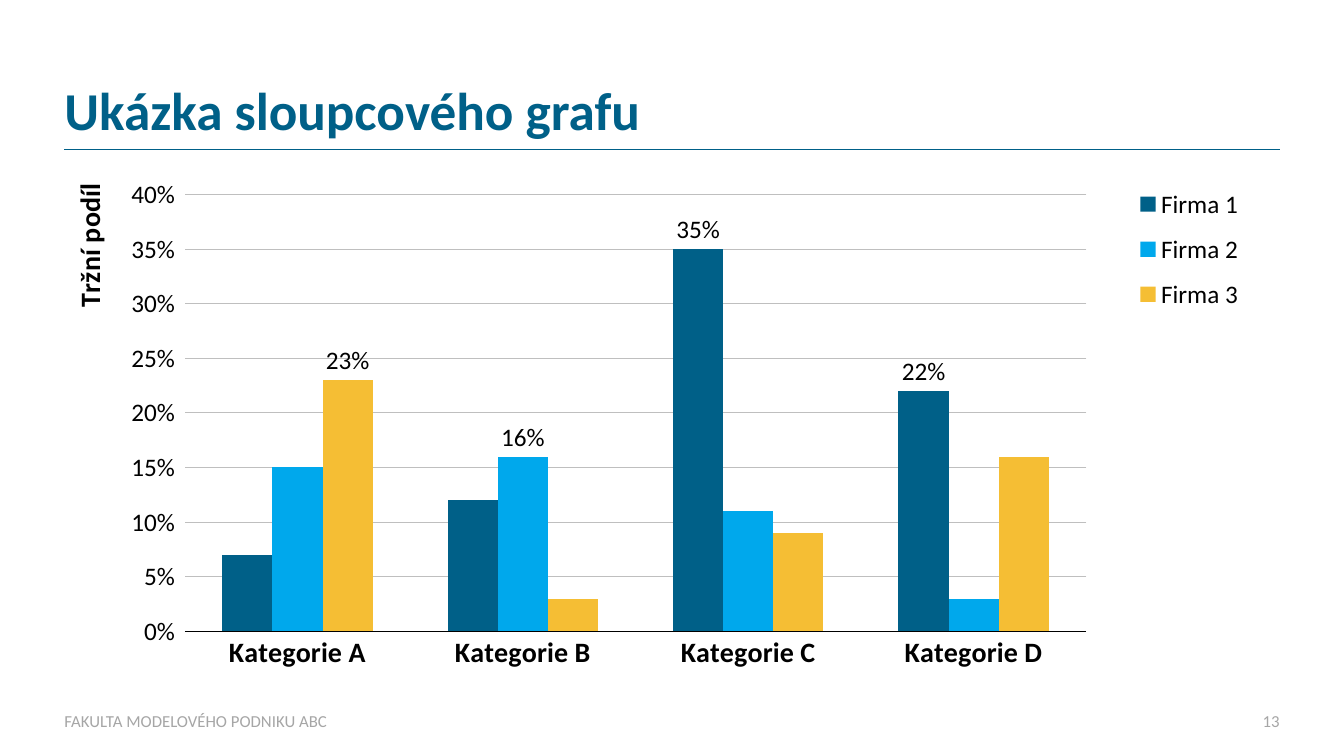
from lxml import etree
from pptx import Presentation
from pptx.chart.data import CategoryChartData
from pptx.dml.color import RGBColor
from pptx.enum.chart import XL_CHART_TYPE, XL_LABEL_POSITION, XL_LEGEND_POSITION, XL_TICK_MARK
from pptx.enum.shapes import MSO_CONNECTOR
from pptx.enum.text import MSO_ANCHOR, PP_ALIGN
from pptx.oxml.ns import qn
from pptx.util import Pt

COLUMNS = XL_CHART_TYPE.COLUMN_CLUSTERED
STRAIGHT = MSO_CONNECTOR.STRAIGHT
OUTSIDE_END = XL_LABEL_POSITION.OUTSIDE_END
LEGEND_RIGHT = XL_LEGEND_POSITION.RIGHT
TICK_NONE, TICK_OUT = XL_TICK_MARK.NONE, XL_TICK_MARK.OUTSIDE
BOTTOM, MIDDLE = MSO_ANCHOR.BOTTOM, MSO_ANCHOR.MIDDLE
LEFT, RIGHT = PP_ALIGN.LEFT, PP_ALIGN.RIGHT

FONT = "Calibri"
COLORS = {"petrol": "006088", "sky": "00A8EC", "amber": "F5BE34",
          "black": "000000", "grid": "BFBFBF", "footer": "A6A6A6"}
MARGIN, WIDTH, CHART_HEIGHT = 46, 868, 368.5

categories = ["Kategorie A", "Kategorie B", "Kategorie C", "Kategorie D"]
firms = [
    ("Firma 1", "petrol", [0.07, 0.12, 0.35, 0.22]),
    ("Firma 2", "sky", [0.15, 0.16, 0.11, 0.03]),
    ("Firma 3", "amber", [0.23, 0.03, 0.09, 0.16]),
]


def style(font, size, color="black", bold=False):
    font.name = FONT
    font.size = Pt(size)
    font.bold = bold
    font.color.rgb = RGBColor.from_string(COLORS[color])


def set_layout(parent, index, modes, **box):
    old = parent.find(qn("c:layout"))
    if old is not None:
        parent.remove(old)
    layout = etree.Element(qn("c:layout"))
    parent.insert(index, layout)
    manual = etree.SubElement(layout, qn("c:manualLayout"))
    for name, value in modes.items():
        etree.SubElement(manual, qn("c:" + name)).set("val", value)
    for name, length in box.items():
        share = length / (WIDTH if name in "xw" else CHART_HEIGHT)
        etree.SubElement(manual, qn("c:" + name)).set("val", str(share))


prs = Presentation()
prs.slide_width, prs.slide_height = Pt(960), Pt(540)
s = prs.slides.add_slide(prs.slide_layouts[5])

rule = s.shapes.add_connector(STRAIGHT, Pt(MARGIN), Pt(106.5), Pt(MARGIN + WIDTH), Pt(106.5))
rule.line.color.rgb = RGBColor.from_string(COLORS["petrol"])
rule.line.width = Pt(0.25)
etree.SubElement(rule._element.spPr, qn("a:effectLst"))

title = s.shapes.title
footer = s.shapes.add_textbox(0, 0, 0, 0)
number = s.shapes.add_textbox(0, 0, 0, 0)
texts = [
    (title, "Ukázka sloupcového grafu", MARGIN, 60, WIDTH, 41.5, BOTTOM, LEFT, 38, "petrol", True),
    (footer, "FAKULTA MODELOVÉHO PODNIKU ABC", MARGIN, 507.5, 732, 14.5, MIDDLE, LEFT, 12, "footer", False),
    (number, "13", 877, 507.5, 37, 14.5, MIDDLE, RIGHT, 12, "footer", False),
]
for sp, text, x, y, w, h, anchor, align, size, color, bold in texts:
    sp.left, sp.top, sp.width, sp.height = Pt(x), Pt(y), Pt(w), Pt(h)
    tf = sp.text_frame
    tf.text = text
    tf.word_wrap = True
    tf.vertical_anchor = anchor
    tf.margin_left = tf.margin_right = tf.margin_top = tf.margin_bottom = 0
    p = tf.paragraphs[0]
    p.alignment = align
    style(p.runs[0].font, size, color, bold)
title.text_frame.paragraphs[0].line_spacing = 0.9

data = CategoryChartData(number_format="0%")
data.categories = categories
for name, color, shares in firms:
    data.add_series(name, shares)
chart = s.shapes.add_chart(COLUMNS, Pt(MARGIN), Pt(122.5), Pt(WIDTH), Pt(CHART_HEIGHT), data).chart
chart.has_title = False
style(chart.font, 18)

plot = chart.plots[0]
plot.gap_width = 150
plot.overlap = 0
plot.vary_by_categories = False
leaders = [max(shares) for shares in zip(*(firm[2] for firm in firms))]
for series, (name, color, shares) in zip(plot.series, firms):
    series.format.fill.solid()
    series.format.fill.fore_color.rgb = RGBColor.from_string(COLORS[color])
    series.invert_if_negative = False
    labels = series.data_labels
    labels.show_value = False
    labels.number_format = "0%"
    labels.number_format_is_linked = False
    for i, share in enumerate(shares):
        if share == leaders[i]:
            label = series.points[i].data_label
            label.position = OUTSIDE_END
            style(label.font, 18)

cat_axis = chart.category_axis
cat_axis.major_tick_mark = TICK_NONE
cat_axis.format.line.color.rgb = RGBColor.from_string(COLORS["black"])
cat_axis.format.line.width = Pt(0.5)
style(cat_axis.tick_labels.font, 20, bold=True)

val_axis = chart.value_axis
val_axis.minimum_scale, val_axis.maximum_scale, val_axis.major_unit = 0, 0.4, 0.05
val_axis.major_tick_mark = TICK_OUT
val_axis.format.line.fill.background()
val_axis.major_gridlines.format.line.color.rgb = RGBColor.from_string(COLORS["grid"])
val_axis.major_gridlines.format.line.width = Pt(0.75)
val_axis.tick_labels.number_format = "0%"
val_axis.tick_labels.number_format_is_linked = False
style(val_axis.tick_labels.font, 18)

axis_title = val_axis.axis_title
tf = axis_title.text_frame
tf.text = "Tržní podíl"
style(tf.paragraphs[0].runs[0].font, 20, bold=True)
body = axis_title._element.find(".//" + qn("a:bodyPr"))
body.set("rot", "-5400000")
body.set("vert", "horz")

chart.has_legend = True
legend = chart.legend
legend.position = LEGEND_RIGHT
legend.include_in_layout = False
style(legend.font, 18)

edges = {"xMode": "edge", "yMode": "edge"}
inner = {"layoutTarget": "inner", **edges}
set_layout(chart._chartSpace.chart.plotArea, 0, inner, x=86, y=16.5, w=644, h=312)
set_layout(axis_title._element, 1, edges, x=0, y=5)
set_layout(legend._element, 1, edges, x=760, y=2, w=87, h=107)

prs.save("out.pptx")
